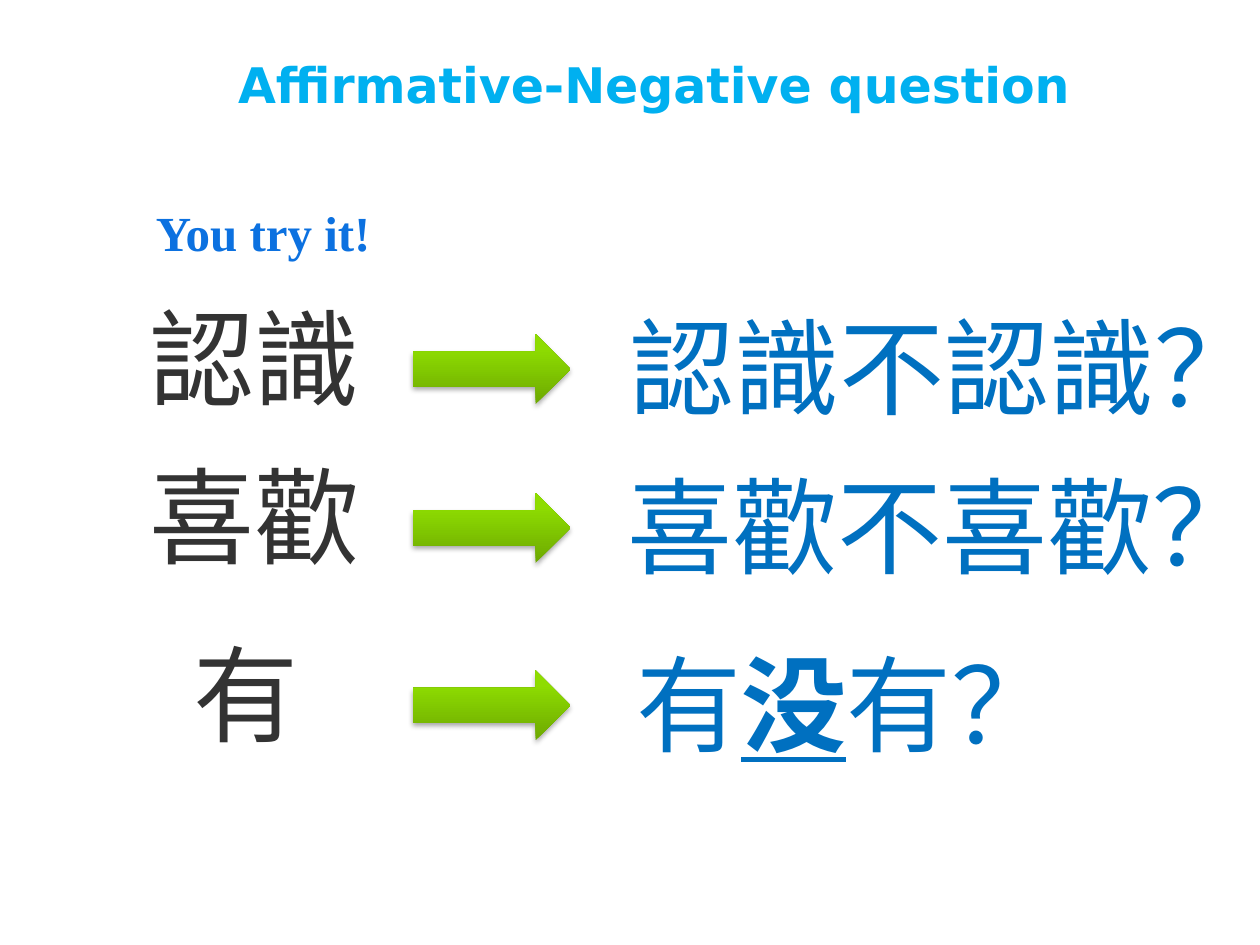
from copy import deepcopy
from dataclasses import dataclass

from pptx import Presentation
from pptx.dml.color import RGBColor
from pptx.enum.lang import MSO_LANGUAGE_ID
from pptx.enum.shapes import MSO_SHAPE
from pptx.enum.text import MSO_ANCHOR, PP_ALIGN
from pptx.oxml import parse_xml
from pptx.oxml.ns import nsdecls, qn
from pptx.util import Pt


@dataclass(frozen=True)
class Theme:
    title_color: str = "00B0F0"
    prompt_color: str = "0C71E0"
    word_color: str = "333333"
    answer_color: str = "0070C0"
    arrow_stops: tuple = ((0, "6DA901"), (0.8, "8EDC01"), (1, "8FDE00"))
    title_font: str = "DejaVu Sans"
    body_font: str = "Times New Roman"
    heading_size: int = 28
    word_size: int = 60


def add_span(para, text, *, font, size, color, bold=False, underline=False, language=None):
    span = para.add_run()
    span.text = text
    span.font.name = font
    span.font.size = Pt(size)
    span.font.bold = bold
    span.font.underline = underline
    span.font.color.rgb = RGBColor.from_string(color)
    if language:
        span.font.language_id = language


class Lesson:
    """Draws the elements of a lesson page in one theme."""

    def __init__(self, page, theme):
        self.page = page
        self.theme = theme

    def box(self, left, top, width, height, *, anchor=MSO_ANCHOR.MIDDLE, wrap=True):
        frame = self.page.shapes.add_textbox(Pt(left), Pt(top), Pt(width), Pt(height)).text_frame
        frame.word_wrap = wrap
        frame.vertical_anchor = anchor
        return frame.paragraphs[0]

    def title(self, text):
        para = self.box(41.8, 23.8, 653.8, 48.2)
        para.alignment = PP_ALIGN.CENTER
        add_span(para, text, font=self.theme.title_font, size=self.theme.heading_size,
                 color=self.theme.title_color, bold=True)

    def prompt(self, text):
        para = self.box(82, 112, 175.7, 41, anchor=MSO_ANCHOR.TOP)
        add_span(para, text, font=self.theme.body_font, size=self.theme.heading_size,
                 color=self.theme.prompt_color, bold=True)

    def words(self, left, top, width, color, *parts):
        para = self.box(left, top, width, 79.9, wrap=False)
        for text, stressed in parts:
            add_span(para, text, font=self.theme.body_font, size=self.theme.word_size,
                     color=color, bold=stressed, underline=stressed,
                     language=MSO_LANGUAGE_ID.SIMPLIFIED_CHINESE)

    def arrow(self, top):
        arrow = self.page.shapes.add_shape(MSO_SHAPE.RIGHT_ARROW, Pt(236), Pt(top), Pt(90), Pt(40))
        arrow.line.fill.background()
        arrow.fill.gradient()
        arrow.fill.gradient_angle = 90
        properties = arrow._element.spPr
        stop_list = properties.find(".//" + qn("a:gsLst"))
        stop_list.append(deepcopy(stop_list[-1]))
        for stop, (position, color) in zip(arrow.fill.gradient_stops, self.theme.arrow_stops):
            stop.position = position
            stop.color.rgb = RGBColor.from_string(color)
        properties.append(parse_xml(
            f'<a:effectLst {nsdecls("a")}><a:outerShdw blurRad="{Pt(3.1)}" dist="{Pt(1.8)}" '
            'dir="5400000" rotWithShape="0"><a:srgbClr val="000000"><a:alpha val="35000"/>'
            '</a:srgbClr></a:outerShdw></a:effectLst>'))


def main():
    deck = Presentation()
    deck.slide_width, deck.slide_height = Pt(720), Pt(540)
    theme = Theme()
    lesson = Lesson(deck.slides.add_slide(deck.slide_layouts[6]), theme)
    lesson.title(" Affirmative-Negative question")
    lesson.prompt("You try it!")
    rows = (
        (163.5, "認識", 78.5, 135.4, 352.8, 388, [("認識不認識？", False)]),
        (254.2, "喜歡", 78.5, 135.4, 351.4, 378, [("喜歡不喜歡？", False)]),
        (355.7, "有", 103.7, 74.2, 356.4, 254.2, [("有", False), ("没", True), ("有？", False)]),
    )
    for top, word, left, width, answer_left, answer_width, answer in rows:
        lesson.words(left, top, width, theme.word_color, (word, False))
        lesson.words(answer_left, top + 5.5, answer_width, theme.answer_color, *answer)
        lesson.arrow(top + 27.4)
    deck.save("out.pptx")


if __name__ == "__main__":
    main()
